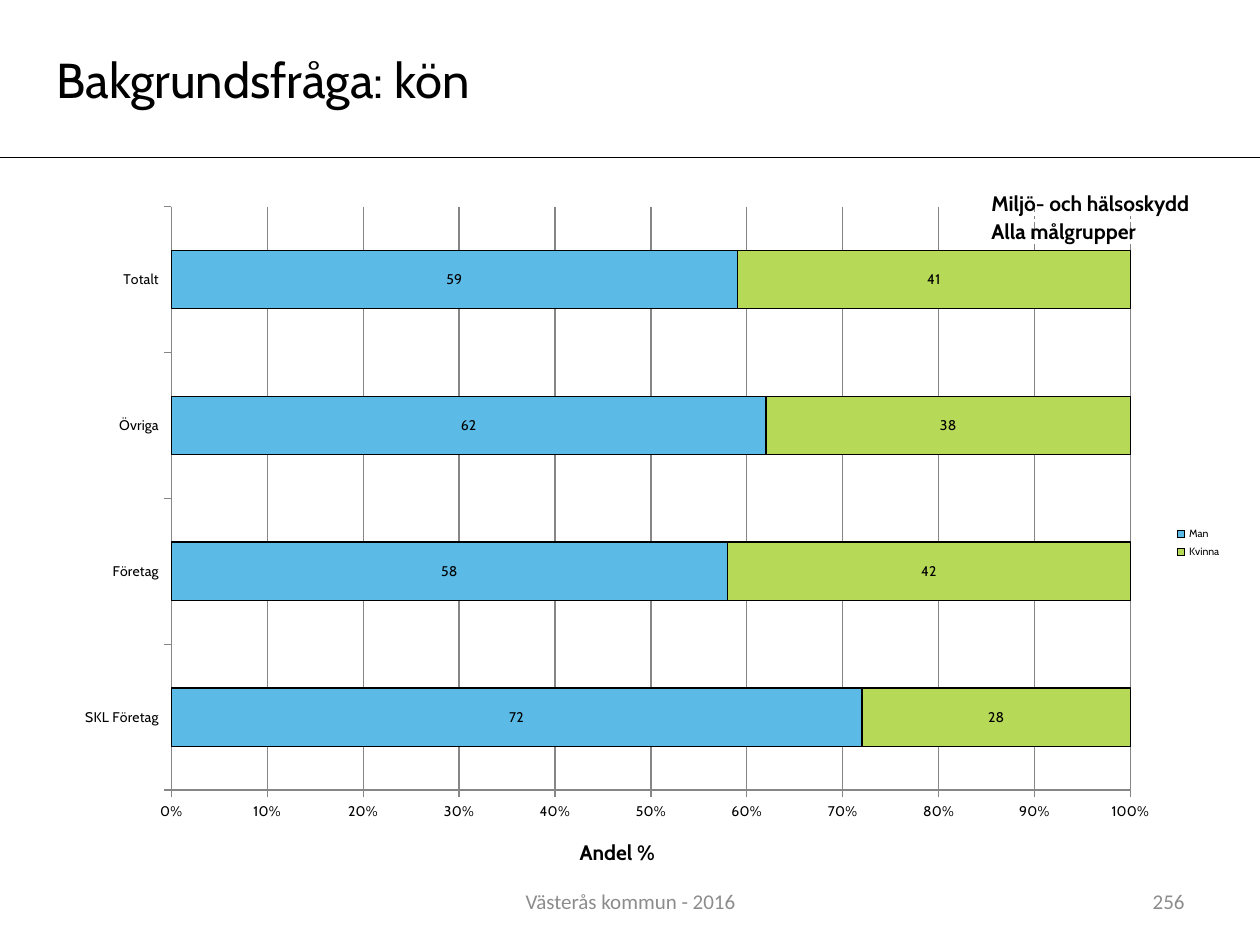
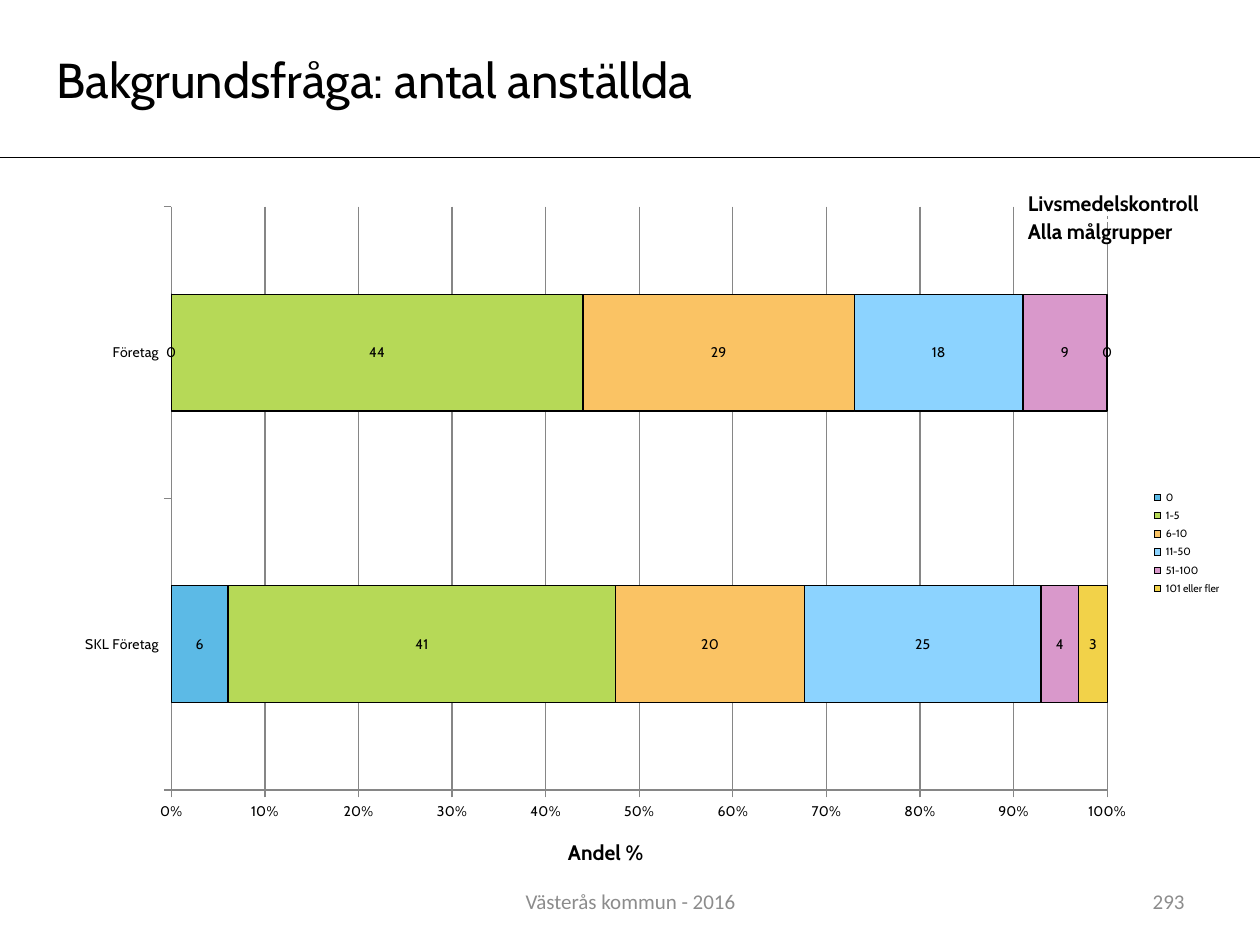
from pptx import Presentation
from pptx.chart.data import CategoryChartData
from pptx.dml.color import RGBColor
from pptx.enum.chart import XL_CHART_TYPE as ChartType
from pptx.enum.chart import XL_LEGEND_POSITION as LegendPosition
from pptx.enum.chart import XL_TICK_MARK as TickMark
from pptx.enum.shapes import MSO_CONNECTOR as Connector
from pptx.enum.shapes import MSO_SHAPE as Shape
from pptx.enum.text import MSO_ANCHOR as Anchor
from pptx.enum.text import PP_ALIGN as Align
from pptx.oxml.ns import qn
from pptx.util import Inches, Pt

BLACK, WHITE, FOOTER_GREY, GRID_GREY = "000000", "FFFFFF", "8C8C8C", "868686"
SERIES_COLOURS = ["5CBAE6", "B6D957", "FAC364", "8CD3FF", "D998CB", "F2D249"]
HEADING_FONT, FOOTER_FONT = "Cabin", "Calibri"
FOOTER = "Västerås kommun - 2016"


def colour(hex_value):
    return RGBColor.from_string(hex_value)


def set_font(font, hex_value=BLACK, **values):
    values = {"name": HEADING_FONT, "bold": False, **values}
    for key, value in values.items():
        setattr(font, key, Pt(value) if key == "size" else value)
    font.color.rgb = colour(hex_value)


def set_line(line, hex_value, width):
    line.color.rgb = colour(hex_value)
    line.width = Pt(width)


class SurveyDeck:
    def __init__(self):
        self.prs = Presentation()
        self.prs.slide_width = Inches(10)
        self.prs.slide_height = Inches(7.5)
        self.slide = None

    def new_slide(self):
        self.slide = self.prs.slides.add_slide(self.prs.slide_layouts[6])

    def put_text(self, shape, text, align=Align.LEFT, **font):
        frame = shape.text_frame
        frame.word_wrap = True
        frame.vertical_anchor = Anchor.MIDDLE
        paragraph = frame.paragraphs[0]
        paragraph.alignment = align
        run = paragraph.add_run()
        run.text = text
        set_font(run.font, **font)
        return paragraph

    def footer(self, text, left, width, align):
        box = self.slide.shapes.add_textbox(
            Inches(left), Inches(6.95), Inches(width), Inches(0.4))
        self.put_text(box, text, align, size=12, name=FOOTER_FONT,
                      hex_value=FOOTER_GREY)

    def framed_text(self, text, left, top, width, height, **font):
        frame = self.slide.shapes.add_shape(
            Shape.RECTANGLE, Inches(left), Inches(top), Inches(width), Inches(height))
        frame.shadow.inherit = False
        frame.fill.background()
        set_line(frame.line, WHITE, 2)
        return self.put_text(frame, text, **font)

    def title(self, text):
        paragraph = self.framed_text(text, 0.07, 0.43, 6, 0.39, size=28)
        properties = paragraph._p.get_or_add_pPr()
        properties.set("marL", "0")
        properties.set("indent", str(Inches(0.28)))

    def rule(self):
        rule = self.slide.shapes.add_connector(
            Connector.STRAIGHT, 0, Inches(1.25), Inches(10), Inches(1.25))
        set_line(rule.line, BLACK, 0.75)
        properties = rule._element.spPr
        properties.append(properties.makeelement(qn("a:effectLst"), {}))

    def share_chart(self, groups, answers):
        data = CategoryChartData()
        data.categories = groups
        for answer, shares in answers.items():
            data.add_series(answer, shares)
        chart = self.slide.shapes.add_chart(
            ChartType.BAR_STACKED_100, Inches(0.49), Inches(1.53),
            Inches(9.31), Inches(5.56), data).chart
        set_font(chart.font, size=18, name=FOOTER_FONT)
        chart.has_title = False

        # Bars
        plot = chart.plots[0]
        plot.gap_width, plot.overlap = 150, 100
        plot.vary_by_categories = False
        for series, fill_colour in zip(plot.series, SERIES_COLOURS):
            series.format.fill.solid()
            series.format.fill.fore_color.rgb = colour(fill_colour)
            set_line(series.format.line, BLACK, 0.75)
            series.data_labels.show_value = True
            set_font(series.data_labels.font, size=8)

        # Axes
        share_axis = chart.value_axis
        for axis in (chart.category_axis, share_axis):
            axis.major_tick_mark = TickMark.OUTSIDE
            set_line(axis.format.line, GRID_GREY, 0.75)
            set_font(axis.tick_labels.font, size=8)
        share_axis.minimum_scale, share_axis.maximum_scale = 0, 1
        share_axis.major_unit = 0.1
        share_axis.tick_labels.number_format = "0%"
        share_axis.tick_labels.number_format_is_linked = False
        share_axis.has_major_gridlines = True
        set_line(share_axis.major_gridlines.format.line, GRID_GREY, 0.75)
        heading = share_axis.axis_title.text_frame.paragraphs[0].add_run()
        heading.text = "Andel %"
        set_font(heading.font, size=12, bold=True)

        # Legend
        chart.has_legend = True
        chart.legend.position = LegendPosition.RIGHT
        chart.legend.include_in_layout = False
        set_font(chart.legend.font, size=6)

    def background_question(self, title, area, area_left, page, groups, answers):
        self.new_slide()
        self.footer(FOOTER, 3.42, 3.17, Align.CENTER)
        self.footer(page, 7.17, 2.33, Align.RIGHT)
        self.share_chart(groups, answers)
        for row, label in enumerate((area, "Alla målgrupper")):
            self.framed_text(label, area_left, 1.53 + 0.22 * row,
                             9.93 - area_left, 0.17, size=12, bold=True)
        self.rule()
        self.title(title)


def main():
    deck = SurveyDeck()

    # Gender
    deck.background_question(
        "Bakgrundsfråga: kön", "Miljö- och hälsoskydd", 7.77, "256",
        ["SKL Företag", "Företag", "Övriga", "Totalt"],
        {"Man": [72, 58, 62, 59], "Kvinna": [28, 42, 38, 41]})

    # Number of employees
    deck.background_question(
        "Bakgrundsfråga: antal anställda", "Livsmedelskontroll", 8.06, "293",
        ["SKL Företag", "Företag"],
        {"0": [6, 0], "1-5": [41, 44], "6-10": [20, 29],
         "11-50": [25, 18], "51-100": [4, 9], "101 eller fler": [3, 0]})

    deck.prs.save("out.pptx")


if __name__ == "__main__":
    main()
